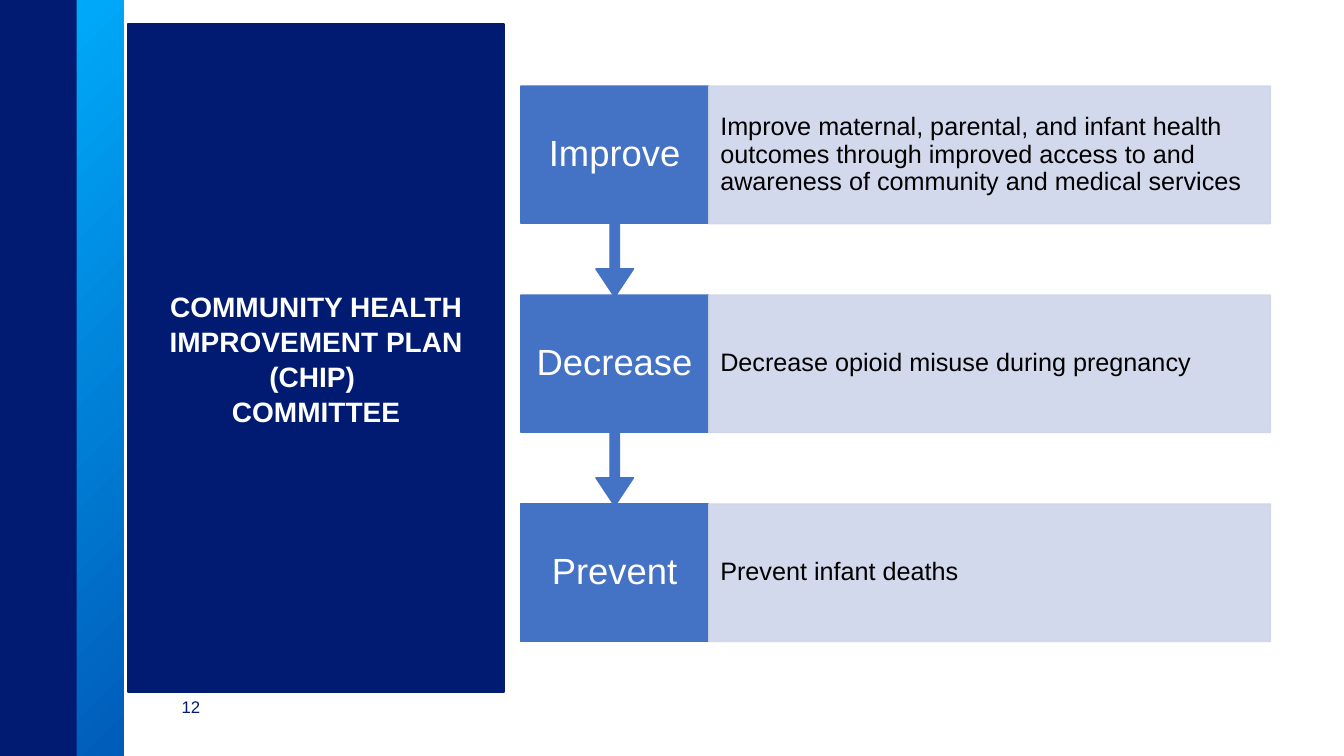
import pptx
import pptx.dml.color
import pptx.enum.shapes
import pptx.enum.text
import pptx.oxml
import pptx.oxml.ns
import pptx.util

RGBColor = pptx.dml.color.RGBColor
SHAPE = pptx.enum.shapes.MSO_SHAPE
ALIGN = pptx.enum.text.PP_ALIGN
ANCHOR = pptx.enum.text.MSO_ANCHOR

NAVY = RGBColor(0x00, 0x1B, 0x71)
DEEP_BLUE = RGBColor(0x00, 0x5C, 0xB9)
SKY = RGBColor(0x00, 0xAC, 0xFC)
STEP_BLUE = RGBColor(0x44, 0x72, 0xC4)
PALE = RGBColor(0xCF, 0xD5, 0xEA)
WHITE = RGBColor(0xFF, 0xFF, 0xFF)
BLACK = RGBColor(0x00, 0x00, 0x00)

EMU_PER_PX = 9525
STEP_LEFT, STEP_TOP, STEP_WIDTH, STEP_HEIGHT = 496, 82, 179, 131
DETAIL_WIDTH = 535
STEP_PITCH = 199
CALLOUT_HEIGHT = 201

STEPS = [
    ("Improve", "Improve maternal, parental, and infant health outcomes through "
                "improved access to and awareness of community and medical services"),
    ("Decrease", "Decrease opioid misuse during pregnancy"),
    ("Prevent", "Prevent infant deaths"),
]


def px(length):
    return pptx.util.Emu(length * EMU_PER_PX)


def write(shape, lines, size, color, bold=False, align=ALIGN.LEFT,
          anchor=ANCHOR.MIDDLE, spacing=1.0, insets=(10, 5)):
    """Fill a shape with one paragraph per line; insets are (sides, top and bottom)."""
    frame = shape.text_frame
    frame.word_wrap = True
    frame.auto_size = pptx.enum.text.MSO_AUTO_SIZE.NONE
    frame.vertical_anchor = anchor
    frame.margin_left = frame.margin_right = px(insets[0])
    frame.margin_top = frame.margin_bottom = px(insets[1])
    for index, line in enumerate(lines):
        para = frame.add_paragraph() if index else frame.paragraphs[0]
        para.alignment = align
        para.line_spacing = spacing
        span = para.add_run()
        span.text = line
        span.font.name = "Arial"
        span.font.size = pptx.util.Pt(size)
        span.font.bold = bold
        span.font.color.rgb = color


def paint(shape, color, line_width=None):
    shape.fill.solid()
    shape.fill.fore_color.rgb = color
    if line_width is None:
        shape.line.fill.background()
    else:
        shape.line.color.rgb = color
        shape.line.width = pptx.util.Pt(line_width)


def add_box(page, kind, left, top, width, height, color, line_width=None):
    box = page.shapes.add_shape(kind, px(left), px(top), px(width), px(height))
    box.shadow.inherit = False
    paint(box, color, line_width)
    return box


def set_opacity(shape, percent):
    """Apply the same opacity to the fill and the line."""
    for color in shape.fill._xPr.iter(pptx.oxml.ns.qn("a:srgbClr")):
        alpha = pptx.oxml.parse_xml(
            f'<a:alpha {pptx.oxml.ns.nsdecls("a")} val="{percent * 1000}"/>')
        color.append(alpha)


def add_side_bands(page):
    light = add_box(page, SHAPE.RECTANGLE, 45, 0, 73, 720, SKY)
    light.fill.gradient()
    light.fill.gradient_angle = 135
    for stop, color in zip(light.fill.gradient_stops, (DEEP_BLUE, SKY)):
        stop.color.rgb = color
    add_box(page, SHAPE.RECTANGLE, 0, 0, 73, 720, NAVY)


def add_title_panel(page):
    title = page.shapes.title
    title.left, title.top, title.width, title.height = map(px, (122, 23, 358, 636))
    paint(title, NAVY, 1.75)
    write(title, ["COMMUNITY HEALTH IMPROVEMENT PLAN (CHIP) ", "COMMITTEE"], 20, WHITE,
          bold=True, align=ALIGN.CENTER, spacing=1.04)


def add_step(page, top, name, detail, is_last):
    # Every step but the last points down to the next one
    if is_last:
        step = add_box(page, SHAPE.RECTANGLE, STEP_LEFT, top, STEP_WIDTH, STEP_HEIGHT,
                       STEP_BLUE, 1)
    else:
        step = add_box(page, SHAPE.DOWN_ARROW_CALLOUT, STEP_LEFT, top, STEP_WIDTH,
                       CALLOUT_HEIGHT, STEP_BLUE, 1)
        for index, value in enumerate((0.05, 0.1, 0.15, 0.65)):
            step.adjustments[index] = value
    write(step, [name], 26, WHITE, align=ALIGN.CENTER, spacing=0.9, insets=(12, 19))

    box = add_box(page, SHAPE.RECTANGLE, STEP_LEFT + STEP_WIDTH, top, DETAIL_WIDTH,
                  STEP_HEIGHT, PALE, 1)
    set_opacity(box, 90)
    write(box, [detail], 18, BLACK, spacing=0.9, insets=(11, 24))


def main():
    deck = pptx.Presentation()
    deck.slide_width, deck.slide_height = px(1280), px(720)
    page = deck.slides.add_slide(deck.slide_layouts.get_by_name("Title Only"))

    add_side_bands(page)
    add_title_panel(page)

    # Page number
    number = page.shapes.add_textbox(px(163), px(659), px(53), px(38))
    write(number, ["12"], 12, NAVY, anchor=ANCHOR.TOP)

    # Steps, from the bottom up so that each arrow lies over the next step
    for index, (name, detail) in reversed(list(enumerate(STEPS))):
        add_step(page, STEP_TOP + index * STEP_PITCH, name, detail,
                 is_last=index == len(STEPS) - 1)

    deck.save("out.pptx")


if __name__ == "__main__":
    main()
